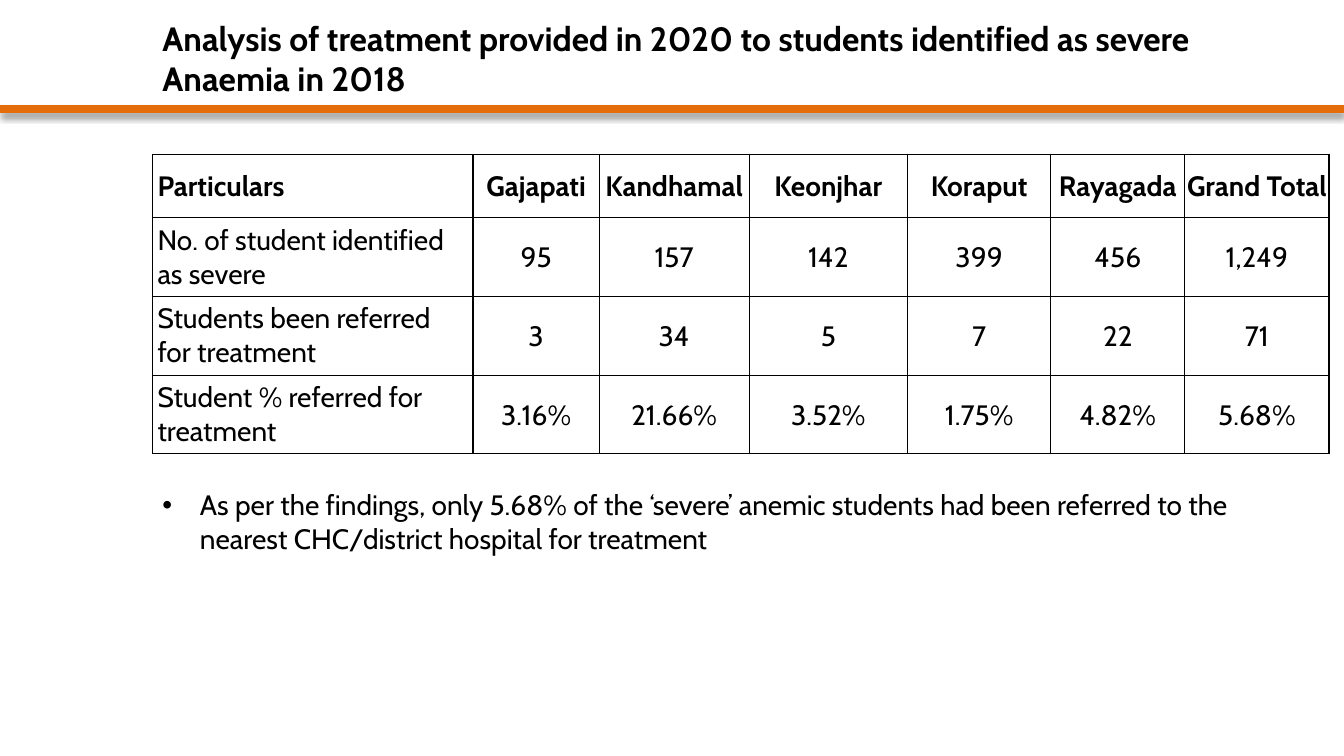
from dataclasses import dataclass

from lxml.etree import SubElement
from pptx import Presentation
from pptx.dml.color import RGBColor
from pptx.enum.shapes import MSO_CONNECTOR
from pptx.enum.text import MSO_ANCHOR, MSO_AUTO_SIZE, PP_ALIGN
from pptx.oxml import parse_xml
from pptx.oxml.ns import nsdecls, qn
from pptx.util import Cm, Pt


@dataclass(frozen=True)
class Theme:
    font: str = "Cabin"
    ink: str = "000000"
    paper: str = "FFFFFF"
    accent: str = "E46C0A"
    title_size: int = 24
    body_size: int = 20


theme = Theme()


def write(frame, text, size=theme.body_size, bold=False, align=PP_ALIGN.LEFT):
    paragraph = frame.paragraphs[0]
    paragraph.alignment = align
    run = paragraph.add_run()
    run.text = text
    run.font.name = theme.font
    run.font.size = Pt(size)
    run.font.bold = bold
    run.font.color.rgb = RGBColor.from_string(theme.ink)
    return paragraph


presentation = Presentation()
presentation.slide_width = Cm(33.87)
presentation.slide_height = Cm(19.05)
slide = presentation.slides.add_slide(presentation.slide_layouts[5])
content_left = Cm(3.84)
content_width = Cm(29.62)

rule = slide.shapes.add_connector(
    MSO_CONNECTOR.STRAIGHT, Cm(0), Cm(2.75), presentation.slide_width, Cm(2.75)
)
rule.line.color.rgb = RGBColor.from_string(theme.accent)
rule.line.width = Pt(6)
rule._element.spPr.append(parse_xml(
    f'<a:effectLst {nsdecls("a")}>'
    f'<a:outerShdw blurRad="{Pt(4)}" dist="{Pt(3)}" dir="5400000" rotWithShape="0">'
    f'<a:srgbClr val="{theme.ink}"><a:alpha val="40000"/></a:srgbClr>'
    '</a:outerShdw></a:effectLst>'
))

title = slide.shapes.title
title.left, title.top = content_left, Cm(0.53)
title.width, title.height = Cm(26.54), Cm(1.85)
title.text_frame.word_wrap = True
title.text_frame.auto_size = MSO_AUTO_SIZE.NONE
title.text_frame.vertical_anchor = MSO_ANCHOR.MIDDLE
write(
    title.text_frame,
    "Analysis of treatment provided in 2020 to students identified as severe Anaemia in 2018",
    size=theme.title_size,
    bold=True,
)

referrals = [
    ["Particulars", "Gajapati", "Kandhamal", "Keonjhar", "Koraput", "Rayagada", "Grand Total"],
    ["No. of student identified as severe", "95", "157", "142", "399", "456", "1,249"],
    ["Students been referred for treatment", "3", "34", "5", "7", "22", "71"],
    ["Student % referred for treatment", "3.16%", "21.66%", "3.52%", "1.75%", "4.82%", "5.68%"],
]
column_widths = [8.08, 3.18, 3.78, 3.99, 3.61, 3.38, 3.63]
row_heights = [1.6] + [1.98] * 3

table = slide.shapes.add_table(
    len(referrals), len(column_widths), content_left, Cm(3.89), content_width, Cm(7.54)
).table
table.first_row = False
table.horz_banding = False
for column, width in zip(table.columns, column_widths):
    column.width = Cm(width)
for row, height in zip(table.rows, row_heights):
    row.height = Cm(height)

for row_index, entries in enumerate(referrals):
    for column_index, entry in enumerate(entries):
        is_label = column_index == 0
        cell = table.cell(row_index, column_index)
        cell.vertical_anchor = MSO_ANCHOR.MIDDLE
        inset = Cm(0.13 if is_label else 0.03)
        cell.margin_left = cell.margin_right = cell.margin_top = inset
        cell.margin_bottom = inset if is_label else Cm(0)
        properties = cell._tc.get_or_add_tcPr()
        for side in ("a:lnL", "a:lnR", "a:lnT", "a:lnB"):
            border = SubElement(properties, qn(side), w=str(Pt(1)))
            border_fill = SubElement(border, qn("a:solidFill"))
            SubElement(border_fill, qn("a:srgbClr"), val=theme.ink)
        cell.fill.solid()
        cell.fill.fore_color.rgb = RGBColor.from_string(theme.paper)
        write(
            cell.text_frame,
            entry,
            bold=row_index == 0,
            align=PP_ALIGN.LEFT if is_label else PP_ALIGN.CENTER,
        )

finding = slide.shapes.add_textbox(content_left, Cm(12.17), content_width, Cm(1.96))
finding.text_frame.word_wrap = True
finding.text_frame.auto_size = MSO_AUTO_SIZE.SHAPE_TO_FIT_TEXT
finding_paragraph = write(
    finding.text_frame,
    "As per the findings, only 5.68% of the ‘severe’ anemic students had been referred "
    "to the nearest CHC/district hospital for treatment",
)
indent = finding_paragraph._p.get_or_add_pPr()
indent.set("marL", str(Cm(0.95)))
indent.set("indent", str(Cm(-0.95)))
SubElement(indent, qn("a:buFont"), typeface="Arial")
SubElement(indent, qn("a:buChar"), char="•")
finding_paragraph.space_after = Pt(6)

presentation.save("out.pptx")
